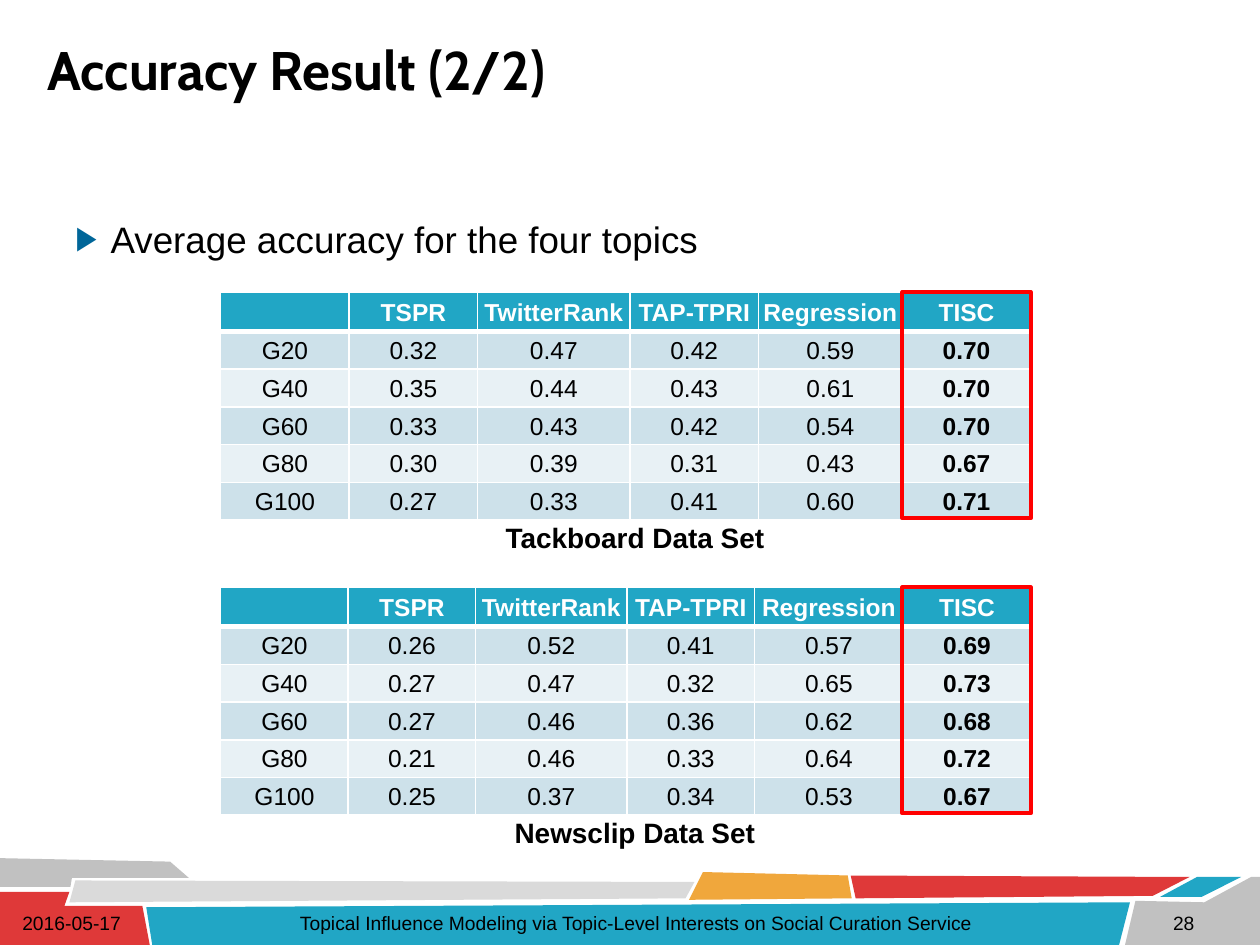
from dataclasses import dataclass

from lxml.etree import SubElement
from pptx import Presentation
from pptx.dml.color import RGBColor
from pptx.enum.shapes import MSO_SHAPE as Shape
from pptx.enum.text import MSO_ANCHOR as Anchor, PP_ALIGN as Align
from pptx.oxml.ns import qn
from pptx.util import Cm, Pt


@dataclass(frozen=True)
class Theme:
    black: str = "000000"
    white: str = "FFFFFF"
    teal: str = "21A6C5"
    red: str = "DF3939"
    amber: str = "F0A73C"
    gray: str = "C1C1C1"
    light_gray: str = "DADADA"
    band_dark: str = "CDE1EA"
    band_light: str = "E8F1F5"
    bullet: str = "006699"
    highlight: str = "FF0000"
    heading_font: str = "Cabin"
    body_font: str = "Arial"
    title_size: float = 31
    body_size: float = 21
    caption_size: float = 16
    table_size: float = 14
    footer_size: float = 11


THEME = Theme()

TITLE = "Accuracy Result (2/2)"
STATEMENT = "Average accuracy for the four topics"
METHODS = ["", "TSPR", "TwitterRank", "TAP-TPRI", "Regression", "TISC"]

# caption, top, column widths, rows (cm)
RESULTS = [
    ("Tackboard Data Set", 5.89, [2.59, 2.59, 3.07, 2.59, 2.9, 2.59], [
        ("G20", "0.32", "0.47", "0.42", "0.59", "0.70"),
        ("G40", "0.35", "0.44", "0.43", "0.61", "0.70"),
        ("G60", "0.33", "0.43", "0.42", "0.54", "0.70"),
        ("G80", "0.30", "0.39", "0.31", "0.43", "0.67"),
        ("G100", "0.27", "0.33", "0.41", "0.60", "0.71"),
    ]),
    ("Newsclip Data Set", 11.84, [2.57, 2.57, 3.05, 2.57, 3, 2.57], [
        ("G20", "0.26", "0.52", "0.41", "0.57", "0.69"),
        ("G40", "0.27", "0.47", "0.32", "0.65", "0.73"),
        ("G60", "0.27", "0.46", "0.36", "0.62", "0.68"),
        ("G80", "0.21", "0.46", "0.33", "0.64", "0.72"),
        ("G100", "0.25", "0.37", "0.34", "0.53", "0.67"),
    ]),
]
TABLE_LEFT, ROW_HEIGHT, HIGHLIGHT_WIDTH = 4.45, 0.76, 2.59
CAPTION_CENTER, CAPTION_WIDTH, CAPTION_DROP = 12.8, 7, 4.47

# text, left, width, alignment (cm)
FOOTER = [
    ("2016-05-17", 0.2, 5.05, Align.LEFT),
    ("Topical Influence Modeling via Topic-Level Interests on Social Curation Service",
     5.72, 14.22, Align.CENTER),
    ("28", 23.06, 1.27, Align.RIGHT),
]

# colour, corners (cm)
RIBBONS = [
    (THEME.gray, [(0, 17.3), (3.43, 17.37), (3.81, 17.7), (1.45, 17.7),
                  (1.42, 17.88), (0, 17.88)]),
    (THEME.red, [(0, 17.98), (1.4, 17.98), (1.3, 18.26), (2.87, 18.26),
                 (3.02, 19.05), (0, 19.05)]),
    (THEME.light_gray, [(1.52, 17.75), (14, 17.78), (13.82, 18.11), (1.4, 18.19)]),
    (THEME.teal, [(2.95, 18.29), (22.78, 18.19), (22.56, 19.05), (3.07, 19.05)]),
    (THEME.amber, [(14.17, 17.58), (17.09, 17.65), (17.17, 18.11), (13.89, 18.14)]),
    (THEME.red, [(17.15, 17.65), (23.98, 17.68), (23.24, 18.06), (17.25, 18.11)]),
    (THEME.teal, [(24.13, 17.68), (25.02, 17.68), (24.23, 18.08), (23.39, 18.08)]),
    (THEME.gray, [(22.89, 18.16), (24.28, 18.19), (25.22, 17.68), (25.4, 17.68),
                  (25.4, 19.05), (22.68, 19.05)]),
]


def rgb(color):
    return RGBColor.from_string(color)


def style_runs(paragraph, size, color=THEME.black, bold=False, font=THEME.body_font):
    for run in paragraph.runs:
        run.font.name = font
        run.font.size = Pt(size)
        run.font.bold = bold
        run.font.color.rgb = rgb(color)


def add_text(slide, text, box, size, align=Align.LEFT, anchor=Anchor.TOP, **style):
    frame = slide.shapes.add_textbox(*map(Cm, box)).text_frame
    frame.word_wrap = True
    frame.vertical_anchor = anchor
    frame.text = text
    paragraph = frame.paragraphs[0]
    paragraph.alignment = align
    style_runs(paragraph, size, **style)
    return paragraph


def add_triangle_bullet(paragraph):
    properties = paragraph._p.get_or_add_pPr()
    properties.set("marL", str(Cm(0.71)))
    properties.set("indent", str(-Cm(0.71)))
    color = SubElement(properties, qn("a:buClr"))
    SubElement(color, qn("a:srgbClr"), val=THEME.bullet)
    SubElement(properties, qn("a:buSzPct"), val="90000")
    SubElement(properties, qn("a:buFont"), typeface=THEME.body_font)
    SubElement(properties, qn("a:buChar"), char="▶")


def add_ribbon(slide, color, corners):
    (start_x, start_y), *others = [(Cm(x), Cm(y)) for x, y in corners]
    builder = slide.shapes.build_freeform(start_x, start_y)
    builder.add_line_segments(others, close=True)
    ribbon = builder.convert_to_shape()
    ribbon.shadow.inherit = False
    ribbon.fill.solid()
    ribbon.fill.fore_color.rgb = rgb(color)
    ribbon.line.fill.background()


def set_borders(cell, top, bottom):
    properties = cell._tc.get_or_add_tcPr()
    for side, points in (("L", 1), ("R", 1), ("T", top), ("B", bottom)):
        line = SubElement(properties, qn(f"a:ln{side}"), w=str(Pt(points)))
        fill = SubElement(line, qn("a:solidFill"))
        SubElement(fill, qn("a:srgbClr"), val=THEME.white)


def fill_cell(cell, text, row, is_best):
    """Row 0 is the header; a thick rule parts it from the banded rows."""
    header = row == 0
    set_borders(cell, top=3 if row == 1 else 1, bottom=3 if header else 1)
    cell.fill.solid()
    band = THEME.band_dark if row % 2 else THEME.band_light
    cell.fill.fore_color.rgb = rgb(THEME.teal if header else band)
    cell.margin_left = cell.margin_right = cell.margin_top = Cm(0.03)
    cell.margin_bottom = 0
    cell.vertical_anchor = Anchor.MIDDLE
    cell.text = text
    paragraph = cell.text_frame.paragraphs[0]
    paragraph.alignment = Align.CENTER
    style_runs(paragraph, THEME.table_size, THEME.white if header else THEME.black,
               bold=header or is_best)


def add_result_table(slide, top, widths, rows):
    grid = [METHODS, *rows]
    table = slide.shapes.add_table(
        len(grid), len(METHODS), Cm(TABLE_LEFT), Cm(top),
        Cm(sum(widths)), Cm(ROW_HEIGHT * len(grid))).table
    for column, width in zip(table.columns, widths):
        column.width = Cm(width)
    for r, values in enumerate(grid):
        table.rows[r].height = Cm(ROW_HEIGHT)
        for c, value in enumerate(values):
            fill_cell(table.cell(r, c), value, r, is_best=c == len(values) - 1)


def add_highlight(slide, top, widths, rows):
    left = TABLE_LEFT + sum(widths) - HIGHLIGHT_WIDTH
    frame = slide.shapes.add_shape(
        Shape.RECTANGLE, Cm(left), Cm(top), Cm(HIGHLIGHT_WIDTH),
        Cm(ROW_HEIGHT * (len(rows) + 1)))
    frame.shadow.inherit = False
    frame.fill.background()
    frame.line.color.rgb = rgb(THEME.highlight)
    frame.line.width = Pt(2.25)


def main():
    deck = Presentation()
    deck.slide_width, deck.slide_height = Cm(25.4), Cm(19.05)
    slide = deck.slides.add_slide(deck.slide_layouts[6])

    for color, corners in RIBBONS:
        add_ribbon(slide, color, corners)

    add_triangle_bullet(add_text(slide, STATEMENT, (1.27, 4.24, 22.86, 12.78), THEME.body_size))
    add_text(slide, TITLE, (0.71, 0.66, 23.98, 1.45), THEME.title_size,
             anchor=Anchor.MIDDLE, bold=True, font=THEME.heading_font)

    caption_left = CAPTION_CENTER - CAPTION_WIDTH / 2
    for caption, top, widths, rows in RESULTS:
        add_result_table(slide, top, widths, rows)
        add_text(slide, caption, (caption_left, top + CAPTION_DROP, CAPTION_WIDTH, 0.94),
                 THEME.caption_size, Align.CENTER, bold=True)
        add_highlight(slide, top, widths, rows)

    for text, left, width, align in FOOTER:
        add_text(slide, text, (left, 18.29, width, 0.64), THEME.footer_size,
                 align, Anchor.MIDDLE)

    deck.save("out.pptx")


if __name__ == "__main__":
    main()
